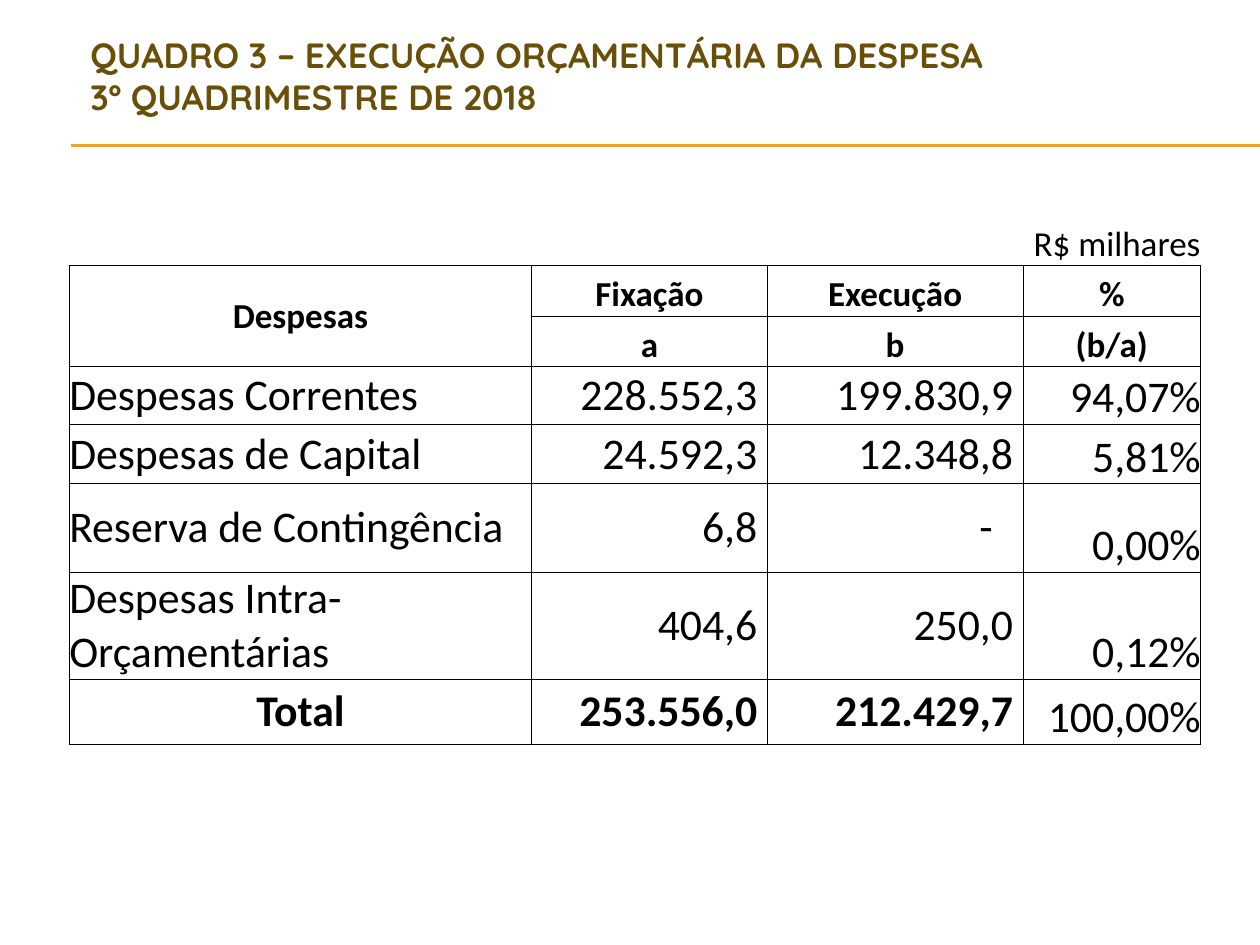
from typing import NamedTuple

from lxml.etree import SubElement
from pptx import Presentation
from pptx.dml.color import RGBColor
from pptx.enum.shapes import MSO_CONNECTOR
from pptx.enum.text import MSO_ANCHOR, PP_ALIGN
from pptx.oxml import parse_xml
from pptx.oxml.ns import nsdecls, qn
from pptx.util import Inches, Pt

BLACK, BROWN, AMBER = "000000", "695008", "F0A22E"
COLUMN_WIDTHS = (3.67, 0.13, 1.74, 0.99, 1.04, 1.41)
ROW_HEIGHTS = (0.7, 0.4, 0.4, 0.46, 0.47, 0.7, 0.85, 0.52)
NAME, FIXED, EXECUTED, SHARE = 0, 1, 3, 5
NUMBER_GAP, DASH_GAP, HEADING_SIZE, BODY_SIZE = 0.08, 0.24, 20, 25


class Expense(NamedTuple):
    name: str
    fixed: str
    executed: str
    share: str


EXPENSES = (
    Expense("Despesas Correntes", "228.552,3", "199.830,9", "94,07%"),
    Expense("Despesas de Capital", "24.592,3", "12.348,8", "5,81%"),
    Expense("Reserva de Contingência", "6,8", "-", "0,00%"),
    Expense("Despesas Intra-Orçamentárias", "404,6", "250,0", "0,12%"),
    Expense("Total", "253.556,0", "212.429,7", "100,00%"),
)
HEADINGS = (("Fixação", "Execução", "%"), ("a", "b", "(b/a)"))


def style_font(font, family: str, size: float, color: str, bold: bool) -> None:
    font.name, font.size, font.bold = family, Pt(size), bold
    font.color.rgb = RGBColor.from_string(color)


def add_rule(slide, y: float) -> None:
    rule = slide.shapes.add_connector(
        MSO_CONNECTOR.STRAIGHT, Inches(0.56), Inches(y), Inches(10), Inches(y))
    rule.line.color.rgb = RGBColor.from_string(AMBER)
    rule.line.width = Pt(0.75)
    SubElement(rule._element.spPr, qn("a:effectLst"))


def add_title(slide) -> None:
    box = slide.shapes.add_textbox(Inches(0.62), Inches(0.23), Inches(8.5), Inches(0.74))
    frame = box.text_frame
    frame.word_wrap = True
    frame.vertical_anchor = MSO_ANCHOR.MIDDLE
    frame.text = "QUADRO 3 – EXECUÇÃO ORÇAMENTÁRIA DA DESPESA\v3º QUADRIMESTRE DE 2018"
    style_font(frame.paragraphs[0].font, "Quicksand", 20, BROWN, True)


def set_borders(cell, sides: str) -> None:
    """Draw thin borders on the sides named by the letters L, R, T and B."""
    properties = cell._tc.get_or_add_tcPr()
    for position, side in enumerate(sides):
        properties.insert(position, parse_xml(
            f'<a:ln{side} {nsdecls("a")} w="{Pt(0.5)}"><a:solidFill>'
            f'<a:srgbClr val="{BLACK}"/></a:solidFill></a:ln{side}>'))


def write_cell(cell, text: str, size: float, align: PP_ALIGN, bold: bool = False,
               anchor: MSO_ANCHOR = MSO_ANCHOR.MIDDLE, gap: float = 0) -> None:
    cell.text = text
    cell.vertical_anchor = anchor
    cell.margin_right = Inches(gap)
    paragraph = cell.text_frame.paragraphs[0]
    paragraph.alignment = align
    style_font(paragraph.font, "Calibri", size, BLACK, bold)


def add_grid(slide):
    """Add the empty bordered table with its merged cells."""
    table = slide.shapes.add_table(
        len(ROW_HEIGHTS), len(COLUMN_WIDTHS), Inches(0.55), Inches(1.41),
        Inches(sum(COLUMN_WIDTHS)), Inches(sum(ROW_HEIGHTS))).table
    table.first_row = table.horz_banding = False
    for column, width in zip(table.columns, COLUMN_WIDTHS):
        column.width = Inches(width)
    for index, (row, height) in enumerate(zip(table.rows, ROW_HEIGHTS)):
        row.height = Inches(height)
        for cell in row.cells:
            cell.margin_left = cell.margin_right = cell.margin_top = cell.margin_bottom = 0
            cell.fill.background()
            set_borders(cell, "LRTB" if index else "B")
        if index:
            for start in (FIXED, EXECUTED):
                table.cell(index, start).merge(table.cell(index, start + 1))
    table.cell(1, NAME).merge(table.cell(2, NAME))
    return table


def fill_headings(table) -> None:
    write_cell(table.cell(0, SHARE), "R$ milhares", HEADING_SIZE, PP_ALIGN.RIGHT,
               anchor=MSO_ANCHOR.BOTTOM)
    write_cell(table.cell(1, NAME), "Despesas", HEADING_SIZE, PP_ALIGN.CENTER, True)
    for row, labels in enumerate(HEADINGS, start=1):
        for column, label in zip((FIXED, EXECUTED, SHARE), labels):
            write_cell(table.cell(row, column), label, HEADING_SIZE, PP_ALIGN.CENTER,
                       True, MSO_ANCHOR.BOTTOM)


def fill_expenses(table) -> None:
    for row, expense in enumerate(EXPENSES, start=3):
        total = expense.name == "Total"
        write_cell(table.cell(row, NAME), expense.name, BODY_SIZE,
                   PP_ALIGN.CENTER if total else PP_ALIGN.LEFT, total)
        for column, amount in ((FIXED, expense.fixed), (EXECUTED, expense.executed)):
            write_cell(table.cell(row, column), amount, BODY_SIZE, PP_ALIGN.RIGHT, total,
                       gap=DASH_GAP if amount == "-" else NUMBER_GAP)
        write_cell(table.cell(row, SHARE), expense.share, BODY_SIZE, PP_ALIGN.RIGHT,
                   anchor=MSO_ANCHOR.BOTTOM)


def main() -> None:
    deck = Presentation()
    deck.slide_width, deck.slide_height = Inches(10), Inches(7.5)
    slide = deck.slides.add_slide(deck.slide_layouts[6])
    for y in (1.15, 1.16):
        add_rule(slide, y)
    add_title(slide)
    table = add_grid(slide)
    fill_headings(table)
    fill_expenses(table)
    deck.save("out.pptx")


if __name__ == "__main__":
    main()
